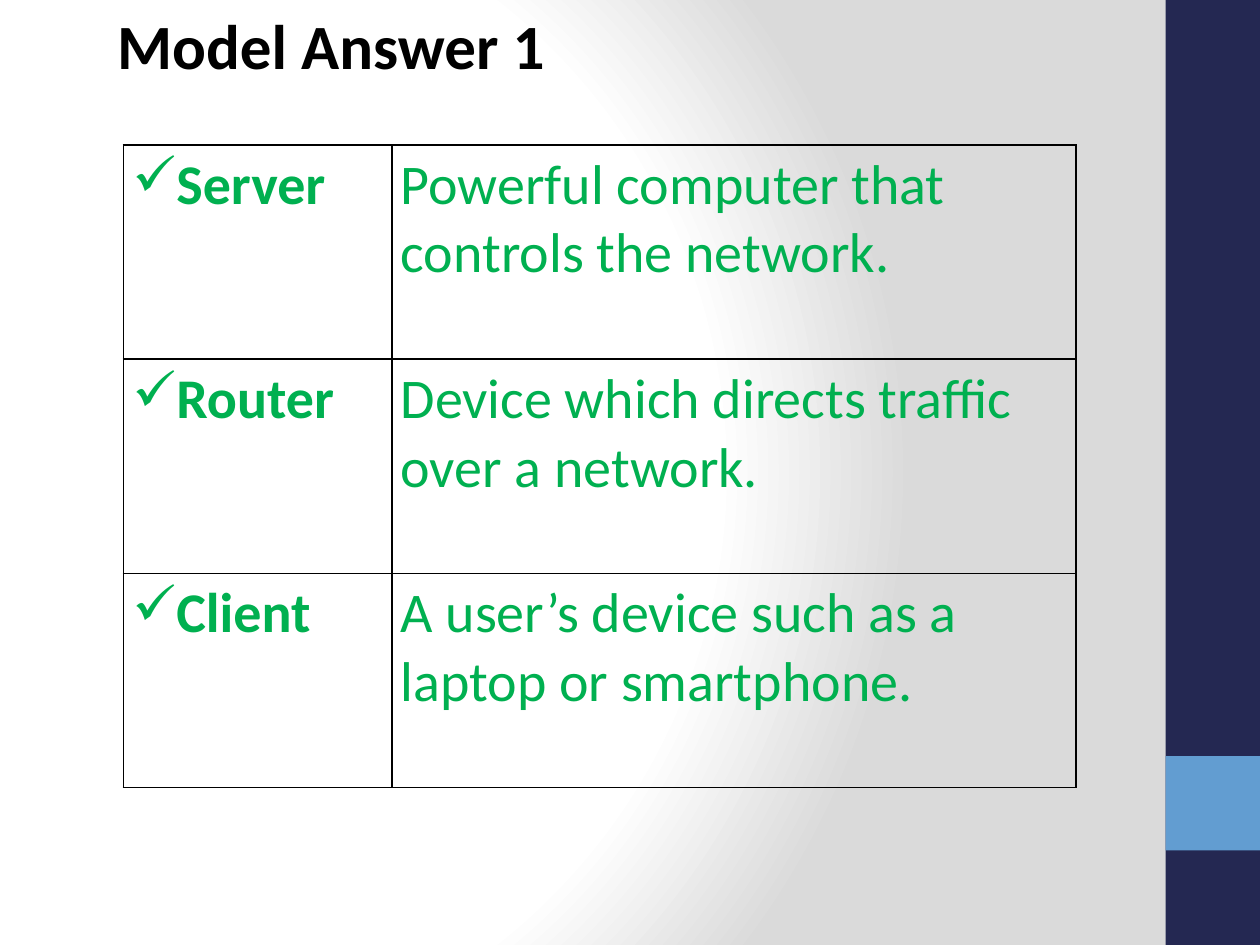
"""Build the Model Answer 1 slide with its table of network terms."""
from pptx import Presentation
from pptx.dml.color import RGBColor
from pptx.enum.shapes import MSO_SHAPE
from pptx.enum.text import MSO_ANCHOR, PP_ALIGN
from pptx.oxml import parse_xml
from pptx.oxml.ns import nsdecls, qn
from pptx.util import Inches, Pt

RECTANGLE = MSO_SHAPE.RECTANGLE
TOP = MSO_ANCHOR.TOP
LEFT = PP_ALIGN.LEFT

BLACK = RGBColor(0x00, 0x00, 0x00)
WHITE = RGBColor(0xFF, 0xFF, 0xFF)
GREY = RGBColor(0xDA, 0xDA, 0xDA)
NAVY = RGBColor(0x24, 0x28, 0x52)
SKY = RGBColor(0x62, 0x9D, 0xD1)
GREEN = RGBColor(0x00, 0xB0, 0x50)

DEFINITIONS = [
    ("Server", "Powerful computer that controls the network."),
    ("Router", "Device which directs traffic over a network."),
    ("Client", "A user’s device such as a laptop or smartphone."),
]


class SlideBuilder:
    font_name = "Calibri"
    term_size = 32
    title_size = 36
    cell_margin = 0.07
    bullet_indent = 0.31

    def __init__(self, deck):
        self.slide = deck.slides.add_slide(deck.slide_layouts[5])

    def background(self, stops):
        self.slide.background.fill.gradient()
        gradient = next(self.slide.element.iter(qn("a:gradFill")))
        stop_xml = "".join(
            f'<a:gs pos="{percent * 1000}"><a:srgbClr val="{color}"/></a:gs>'
            for percent, color in stops
        )
        radial = parse_xml(
            f'<a:gradFill {nsdecls("a")} rotWithShape="1"><a:gsLst>{stop_xml}</a:gsLst>'
            '<a:path path="circle">'
            '<a:fillToRect l="20000" t="50000" r="100000" b="50000"/>'
            "</a:path></a:gradFill>"
        )
        gradient.getparent().replace(gradient, radial)

    def band(self, left, top, width, height, color):
        band = self.slide.shapes.add_shape(
            RECTANGLE, Inches(left), Inches(top), Inches(width), Inches(height)
        )
        band.shadow.inherit = False
        band.fill.solid()
        band.fill.fore_color.rgb = color
        band.line.fill.background()

    def styled_run(self, paragraph, text, size, color, bold):
        paragraph.alignment = LEFT
        run = paragraph.add_run()
        run.text = text
        run.font.name = self.font_name
        run.font.size = Pt(size)
        run.font.bold = bold
        run.font.color.rgb = color

    def title(self, text, left, top, width, height):
        title = self.slide.shapes.title
        title.left, title.top = Inches(left), Inches(top)
        title.width, title.height = Inches(width), Inches(height)
        frame = title.text_frame
        frame.word_wrap = True
        frame.vertical_anchor = TOP
        self.styled_run(frame.paragraphs[0], text, self.title_size, BLACK, True)

    def tick(self, paragraph):
        properties = paragraph._p.get_or_add_pPr()
        indent = Inches(self.bullet_indent)
        properties.set("marL", str(indent))
        properties.set("indent", str(-indent))
        properties.append(parse_xml(f'<a:buChar {nsdecls("a")} char="✓"/>'))

    def cell(self, cell, text, is_term):
        cell.margin_left = cell.margin_right = Inches(self.cell_margin)
        cell.vertical_anchor = TOP
        paragraph = cell.text_frame.paragraphs[0]
        self.styled_run(paragraph, text, self.term_size, GREEN, is_term)
        if is_term:
            self.tick(paragraph)
        properties = cell._tc.get_or_add_tcPr()
        for side in ("lnL", "lnR", "lnT", "lnB"):
            properties.append(parse_xml(
                f'<a:{side} {nsdecls("a")} w="{Pt(1)}"><a:solidFill>'
                f'<a:srgbClr val="{BLACK}"/></a:solidFill></a:{side}>'
            ))
        cell.fill.background()

    def table(self, rows, left, top, column_widths, row_height):
        table = self.slide.shapes.add_table(
            len(rows), len(column_widths), Inches(left), Inches(top),
            Inches(sum(column_widths)), Inches(row_height * len(rows)),
        ).table
        table.first_row = table.horz_banding = False
        for column, width in zip(table.columns, column_widths):
            column.width = Inches(width)
        for row, texts in zip(table.rows, rows):
            row.height = Inches(row_height)
            for index, text in enumerate(texts):
                self.cell(row.cells[index], text, index == 0)


def main():
    deck = Presentation()
    deck.slide_width, deck.slide_height = Inches(10), Inches(7.5)
    builder = SlideBuilder(deck)
    builder.background([(0, WHITE), (75, WHITE), (100, GREY)])
    builder.band(9.25, 0, 0.75, 7.5, NAVY)
    builder.band(9.25, 6, 0.75, 0.75, SKY)
    builder.title("Model Answer 1", 0.83, 0, 8.35, 1.92)
    builder.table(DEFINITIONS, 0.98, 1.15, (2.13, 5.43), 1.7)
    deck.save("out.pptx")


if __name__ == "__main__":
    main()
